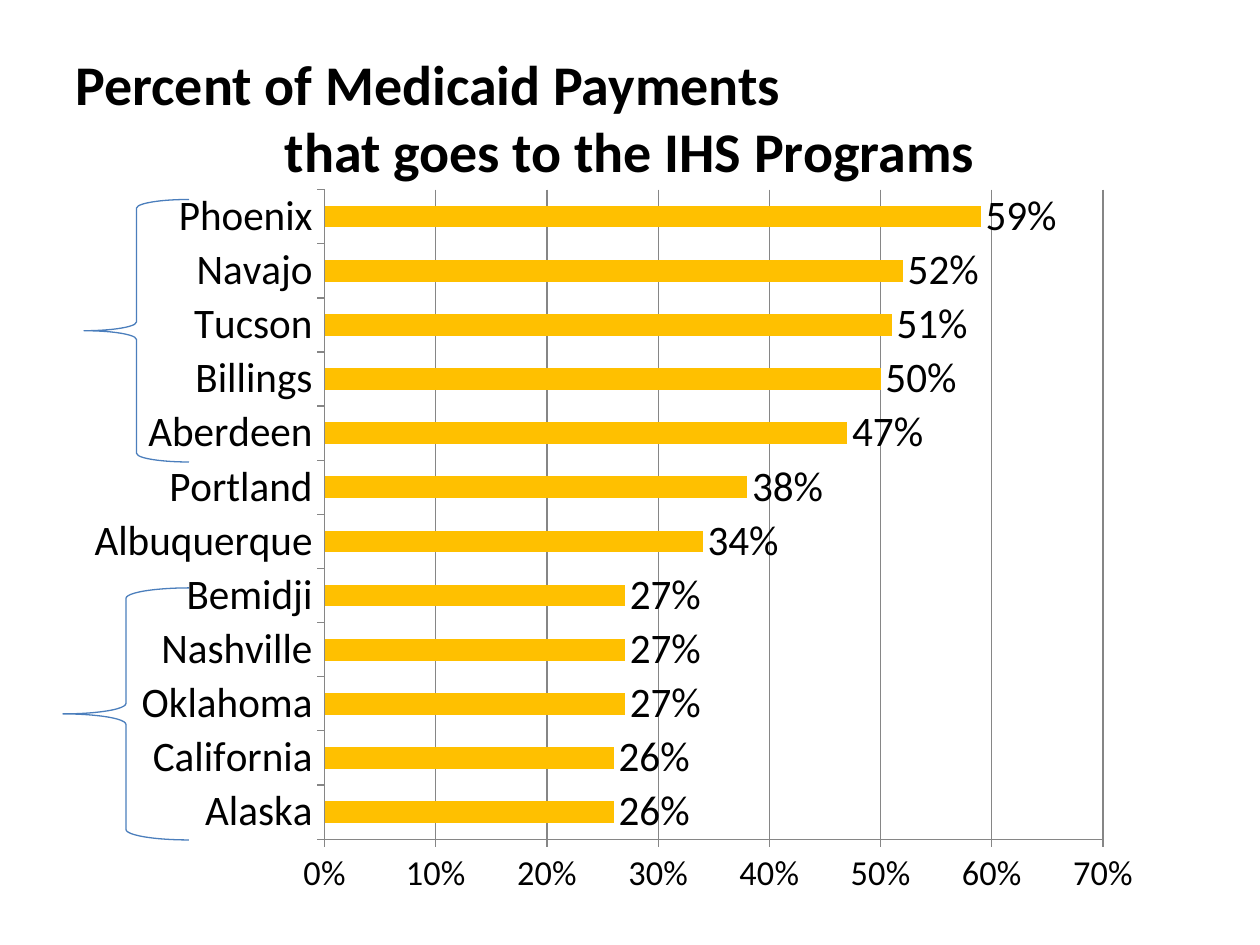
import pptx
import pptx.chart.data
import pptx.dml.color
import pptx.enum.chart
import pptx.enum.shapes
import pptx.enum.text
import pptx.oxml
import pptx.oxml.ns
import pptx.util

COLUMNS, ROWS = 120, 90  # grid cells are 1/12 inch square
BLACK, GOLD, BLUE, GRAY, WHITE = "000000", "FFC000", "4B7EBC", "868686", "FFFFFF"

PAYMENT_SHARES = {
    "Alaska": 0.26, "California": 0.26, "Oklahoma": 0.27, "Nashville": 0.27,
    "Bemidji": 0.27, "Albuquerque": 0.34, "Portland": 0.38, "Aberdeen": 0.47,
    "Billings": 0.50, "Tucson": 0.51, "Navajo": 0.52, "Phoenix": 0.59,
}


def color(hex_string):
    return pptx.dml.color.RGBColor.from_string(hex_string)


class SlideBuilder:
    font_name = "Calibri"

    def __init__(self, presentation):
        self.cell_width = presentation.slide_width / COLUMNS
        self.cell_height = presentation.slide_height / ROWS
        self.slide = presentation.slides.add_slide(presentation.slide_layouts[6])
        background = self.slide.background.fill
        background.solid()
        background.fore_color.rgb = color(WHITE)

    def box(self, column, row, width, height):
        return (round(column * self.cell_width), round(row * self.cell_height),
                round(width * self.cell_width), round(height * self.cell_height))

    def style(self, font, size, bold=False):
        font.name = self.font_name
        font.size = pptx.util.Pt(size)
        font.bold = bold
        font.color.rgb = color(BLACK)

    def title(self, place, lines, size):
        frame = self.slide.shapes.add_textbox(*self.box(*place)).text_frame
        frame.word_wrap = True
        frame.vertical_anchor = pptx.enum.text.MSO_ANCHOR.MIDDLE
        for index, (text, alignment) in enumerate(lines):
            paragraph = frame.add_paragraph() if index else frame.paragraphs[0]
            paragraph.alignment = alignment
            run = paragraph.add_run()
            run.text = text
            self.style(run.font, size, bold=True)

    def bar_chart(self, place, values, plot_area):
        data = pptx.chart.data.CategoryChartData(number_format="0%")
        data.categories = list(values)
        data.add_series("Series 1", list(values.values()))
        chart = self.slide.shapes.add_chart(
            pptx.enum.chart.XL_CHART_TYPE.BAR_CLUSTERED, *self.box(*place), data).chart
        chart.has_legend = False
        chart.has_title = False
        self.style(chart.font, 24)

        # Bars and their labels
        plot = chart.plots[0]
        plot.gap_width = 150
        plot.vary_by_categories = False
        fill = plot.series[0].format.fill
        fill.solid()
        fill.fore_color.rgb = color(GOLD)
        plot.has_data_labels = True
        labels = plot.data_labels
        labels.show_value = True
        labels.position = pptx.enum.chart.XL_LABEL_POSITION.OUTSIDE_END
        labels.number_format = "0%"
        labels.number_format_is_linked = False
        self.style(labels.font, 24)

        # Axes and gridlines
        for axis, size in ((chart.category_axis, 24), (chart.value_axis, 20)):
            axis.major_tick_mark = pptx.enum.chart.XL_TICK_MARK.OUTSIDE
            axis.format.line.color.rgb = color(GRAY)
            self.style(axis.tick_labels.font, size)
        value_axis = chart.value_axis
        value_axis.minimum_scale, value_axis.maximum_scale = 0, 0.7
        value_axis.major_unit = 0.1
        value_axis.tick_labels.number_format = "0%"
        value_axis.tick_labels.number_format_is_linked = False
        value_axis.has_major_gridlines = True
        value_axis.major_gridlines.format.line.color.rgb = color(GRAY)
        self.place_plot(chart, plot_area)

    def place_plot(self, chart, shares):
        settings = [("layoutTarget", "inner"), ("xMode", "edge"), ("yMode", "edge")]
        settings += zip("xywh", shares)
        parts = "".join(f'<c:{name} val="{value}"/>' for name, value in settings)
        layout = pptx.oxml.parse_xml(
            f'<c:layout {pptx.oxml.ns.nsdecls("c")}>'
            f"<c:manualLayout>{parts}</c:manualLayout></c:layout>")
        area = chart.plots[0]._element.getparent()
        for old_layout in area.findall(pptx.oxml.ns.qn("c:layout")):
            area.remove(old_layout)
        area.insert(0, layout)

    def brace(self, place):
        shape = self.slide.shapes.add_shape(
            pptx.enum.shapes.MSO_SHAPE.LEFT_BRACE, *self.box(*place))
        shape.shadow.inherit = False
        shape.fill.background()
        shape.line.color.rgb = color(BLUE)
        shape.line.width = pptx.util.Pt(0.75)


def main():
    presentation = pptx.Presentation()
    presentation.slide_width = pptx.util.Inches(10)
    presentation.slide_height = pptx.util.Inches(7.5)
    builder = SlideBuilder(presentation)

    # Title in two staggered lines
    align = pptx.enum.text.PP_ALIGN
    builder.title((6, 3.6, 108, 15),
                  [("Percent of Medicaid Payments", align.LEFT),
                   ("that goes to the IHS Programs", align.CENTER)], 32)

    # Payments by area
    builder.bar_chart((9, 18, 101, 72), PAYMENT_SHARES, (0.2, 0, 0.75, 0.86))

    # Braces around the highest and the lowest areas
    for place in ((8, 19, 10, 25), (6, 56, 12, 24)):
        builder.brace(place)

    presentation.save("out.pptx")


if __name__ == "__main__":
    main()
